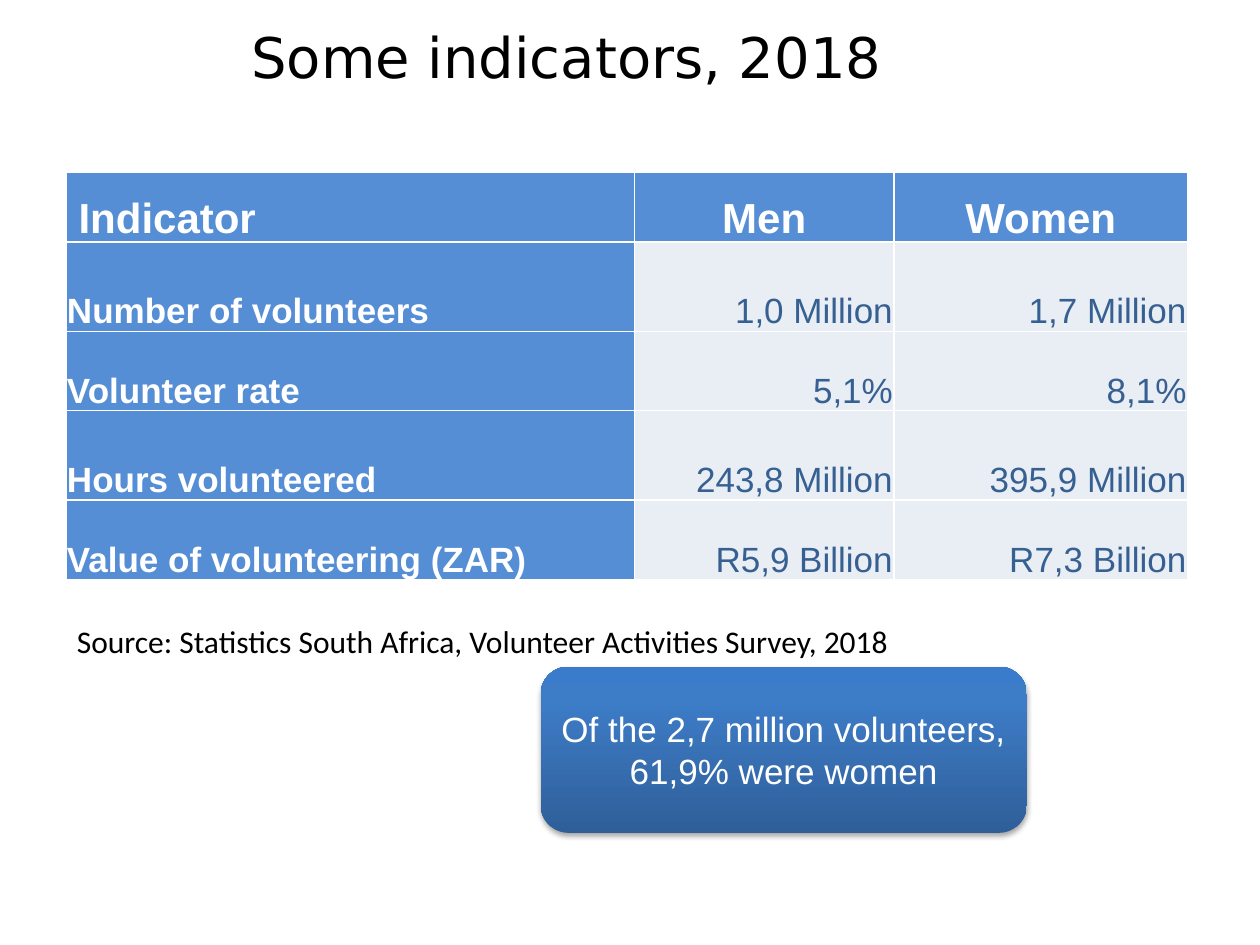
from copy import deepcopy
from lxml import etree
from pptx import Presentation
from pptx import util as u
from pptx.dml.color import RGBColor
from pptx.enum import shapes, text
from pptx.oxml import ns, parse_xml

NS = ns.nsdecls("a")
LEFT, MID, RIGHT = text.PP_ALIGN.LEFT, text.PP_ALIGN.CENTER, text.PP_ALIGN.RIGHT
TOP, CORE, LOW = (text.MSO_ANCHOR.TOP, text.MSO_ANCHOR.MIDDLE,
                  text.MSO_ANCHOR.BOTTOM)
WHITE, BLACK, BLUE, NAVY, PALE = "FFFFFF", "000000", "558ED5", "376092", "E9EDF4"

COLS = [11.46, 5.23, 5.92]
ROWS = [1.4, 1.8, 1.6, 1.8, 1.6]
DATA = [
    (" Indicator", "Men", "Women"),
    ("Number of volunteers", "1,0 Million", "1,7 Million"),
    ("Volunteer rate", "5,1%", "8,1%"),
    ("Hours volunteered", "243,8 Million", "395,9 Million"),
    ("Value of volunteering (ZAR)", "R5,9 Billion", "R7,3 Billion"),
]


def hue(code):
    return RGBColor.from_string(code)


def cms(box):
    return [u.Cm(n) for n in box]


def style(frame, words, size, name, tone, align=LEFT, bold=False):
    frame.text = words
    para = frame.paragraphs[0]
    para.alignment = align
    font = para.runs[0].font
    for key, val in {"size": u.Pt(size), "name": name, "bold": bold}.items():
        setattr(font, key, val)
    font.color.rgb = hue(tone)


def head(slide, box, words):
    title = slide.shapes.title
    title.left, title.top, title.width, title.height = cms(box)
    frame = title.text_frame
    style(frame, words, 32, "DejaVu Sans", BLACK, MID)
    frame.auto_size = text.MSO_AUTO_SIZE.NONE
    frame.vertical_anchor = TOP


def edge(cell):
    """Draw thin white borders; they must precede the cell's fill."""
    props = cell._tc.get_or_add_tcPr()
    for side in ("lnL", "lnR", "lnT", "lnB"):
        props.append(parse_xml(
            f'<a:{side} {NS} w="12700"><a:solidFill>'
            f'<a:srgbClr val="{WHITE}"/></a:solidFill></a:{side}>'))


def grid(slide, left, top):
    box = cms((left, top, sum(COLS), sum(ROWS)))
    table = slide.shapes.add_table(len(ROWS), len(COLS), *box).table
    for col, wide in zip(table.columns, COLS):
        col.width = u.Cm(wide)
    for row, high in zip(table.rows, ROWS):
        row.height = u.Cm(high)
    pads = {"margin_left": u.Cm(0.02), "margin_right": u.Cm(0.02),
            "margin_top": u.Cm(0.02), "margin_bottom": 0,
            "vertical_anchor": LOW}
    for r, line in enumerate(DATA):
        for c, words in enumerate(line):
            cell = table.cell(r, c)
            label = r == 0 or c == 0
            align = LEFT if c == 0 else MID if r == 0 else RIGHT
            edge(cell)
            cell.fill.solid()
            cell.fill.fore_color.rgb = hue(BLUE if label else PALE)
            for key, val in pads.items():
                setattr(cell, key, val)
            style(cell.text_frame, words, 20 if r else 24, "Arial",
                  WHITE if label else NAVY, align, label)


def note(slide, box, words):
    frame = slide.shapes.add_textbox(*cms(box)).text_frame
    frame.word_wrap = True
    frame.auto_size = text.MSO_AUTO_SIZE.SHAPE_TO_FIT_TEXT
    style(frame, words, 18, "Calibri", BLACK)


def shade(shape, stops):
    """Fill from bottom to top with (place, colour) stops."""
    fill = shape.fill
    fill.gradient()
    fill.gradient_angle = 90
    first = shape._element.spPr.find(".//" + ns.qn("a:gs"))
    first.addnext(deepcopy(first))
    for stop, (place, tone) in zip(fill.gradient_stops, stops):
        stop.position = place
        stop.color.rgb = hue(tone)


def drop(shape):
    """Cast a soft shadow straight down."""
    shape.shadow.inherit = False
    effects = shape._element.spPr.find(ns.qn("a:effectLst"))
    cast = etree.SubElement(effects, ns.qn("a:outerShdw"), blurRad="40000",
                            dist="23000", dir="5400000", rotWithShape="0")
    tone = etree.SubElement(cast, ns.qn("a:srgbClr"), val=BLACK)
    etree.SubElement(tone, ns.qn("a:alpha"), val="35000")


def callout(slide, box, words):
    shape = slide.shapes.add_shape(shapes.MSO_SHAPE.ROUNDED_RECTANGLE, *cms(box))
    shade(shape, [(0, "2F5F99"), (0.8, "3D7CC7"), (1, "3A7CCB")])
    shape.line.fill.background()
    drop(shape)
    frame = shape.text_frame
    frame.word_wrap = True
    frame.vertical_anchor = CORE
    style(frame, words, 20, "Arial", WHITE, MID)


def main():
    deck = Presentation()
    deck.slide_width, deck.slide_height = cms((25.4, 19.05))
    slide = deck.slides.add_slide(deck.slide_layouts[5])
    head(slide, (0, 0.33, 22.86, 3.18), "Some indicators, 2018")
    grid(slide, 1.33, 3.48)
    callout(slide, (10.9, 13.44, 9.8, 3.35),
            "Of the 2,7 million volunteers, 61,9% were women")
    note(slide, (1.3, 12.42, 22.4, 1.02),
         "Source: Statistics South Africa, Volunteer Activities Survey, 2018")
    deck.save("out.pptx")


if __name__ == "__main__":
    main()
